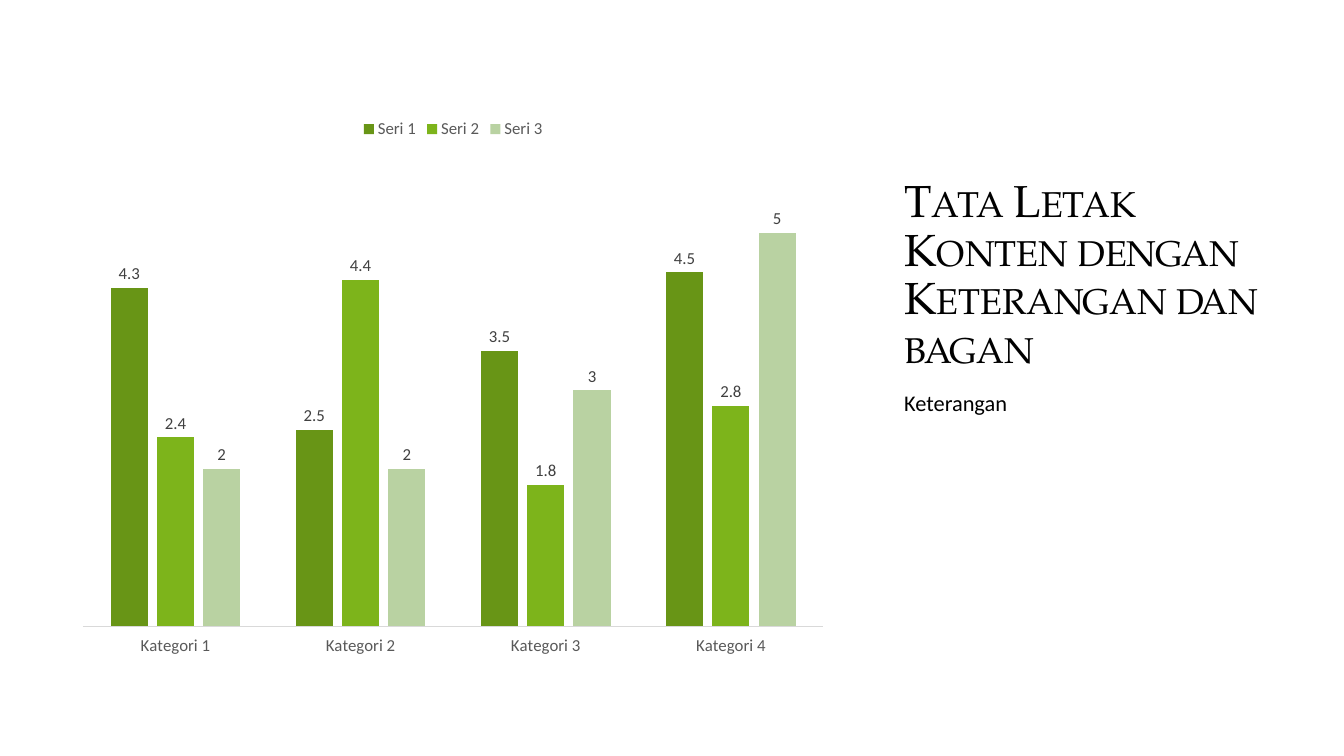
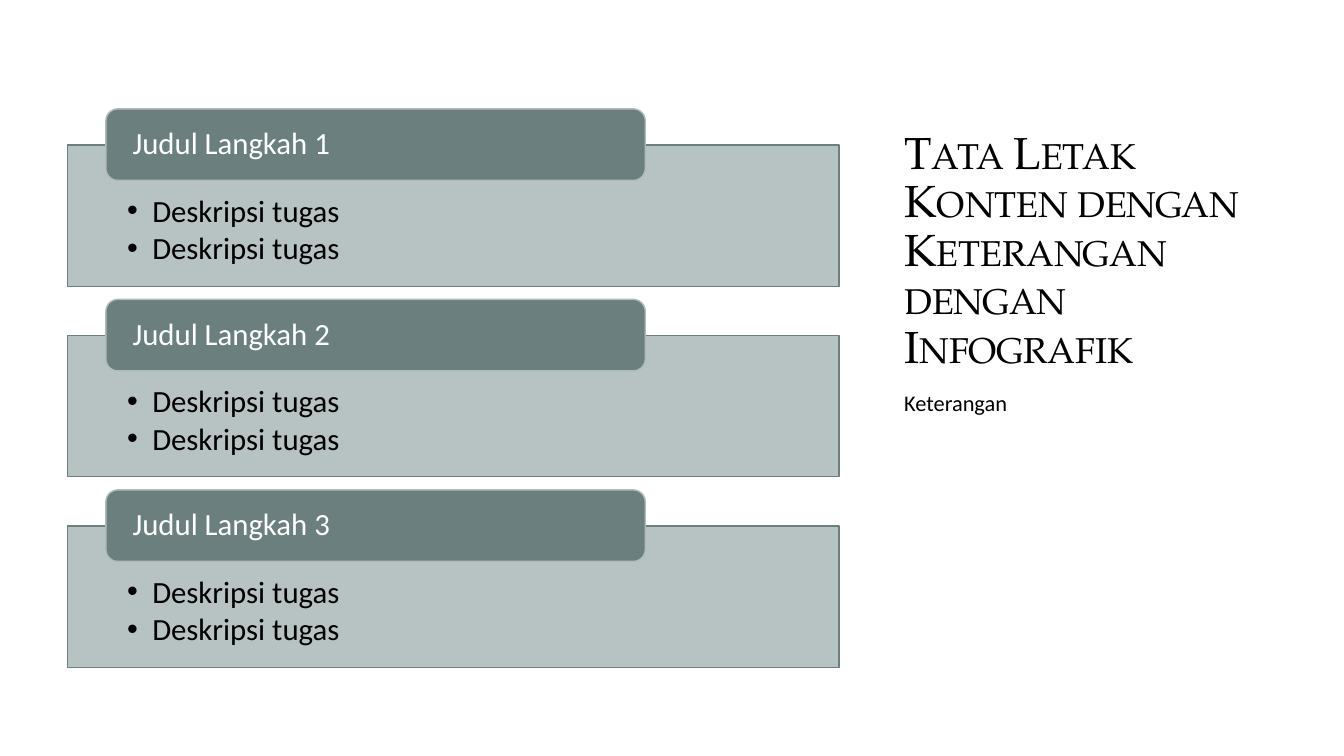
"""Build two caption slides: one with a column chart, one with a list of steps."""
from lxml.etree import SubElement
from pptx import Presentation
from pptx.chart.data import CategoryChartData
from pptx.dml.color import RGBColor
from pptx.enum.chart import XL_CHART_TYPE, XL_LABEL_POSITION, XL_LEGEND_POSITION, XL_TICK_LABEL_POSITION, XL_TICK_MARK
from pptx.enum.shapes import MSO_SHAPE
from pptx.enum.text import MSO_ANCHOR, MSO_AUTO_SIZE, PP_ALIGN
from pptx.oxml.ns import qn
from pptx.util import Inches, Pt

BLACK, WHITE = "000000", "FFFFFF"
AXIS_TEXT, LABEL_TEXT, AXIS_LINE = "595959", "404040", "D9D9D9"
SLATE, PALE_SLATE = "6B7F7F", "B0BCBC"
HEADING = {"name": "TeX Gyre Pagella", "size": Pt(32)}
CAPTION = {"name": "Calibri", "size": Pt(16)}
STEP = {"name": "Calibri", "size": Pt(22)}
CHART_TEXT = {"name": "Calibri", "size": Pt(12)}
LEFT, CONTENT_WIDTH = Inches(0.67), Inches(7.65)
SIDE_LEFT, SIDE_WIDTH = Inches(8.87), Inches(3.8)


def paint(fill, color):
    fill.solid()
    fill.fore_color.rgb = RGBColor.from_string(color)


def set_format(target, values, color=None):
    for attribute, value in values.items():
        setattr(target, attribute, value)
    if color:
        paint(target.fill, color)


deck = Presentation()
deck.slide_width, deck.slide_height = Inches(13.33), Inches(7.5)

slides = []
for heading in ("Tata Letak Konten dengan Keterangan dan bagan",
                "Tata Letak Konten dengan Keterangan dengan Infografik"):
    slide = deck.slides.add_slide(deck.slide_layouts[5])
    slides.append(slide)
    title = slide.shapes.title
    set_format(title, {"left": SIDE_LEFT, "top": Inches(1.25), "width": SIDE_WIDTH, "height": Inches(2.5)})
    caption = slide.shapes.add_textbox(SIDE_LEFT, Inches(3.84), SIDE_WIDTH, Inches(2.3))
    for part, text, look, anchor in ((title, heading, HEADING, MSO_ANCHOR.BOTTOM),
                                     (caption, "Keterangan", CAPTION, MSO_ANCHOR.TOP)):
        set_format(part.text_frame, {"text": text, "word_wrap": True, "auto_size": MSO_AUTO_SIZE.NONE,
                                     "vertical_anchor": anchor})
        paragraph = part.text_frame.paragraphs[0]
        set_format(paragraph, {"alignment": PP_ALIGN.LEFT, "line_spacing": 0.9})
        set_format(paragraph.runs[0].font, look, BLACK)
    for properties in title.element.iter(qn("a:rPr")):
        properties.set("cap", "small")

chart_slide, steps_slide = slides

figures = CategoryChartData()
figures.categories = [f"Kategori {number}" for number in range(1, 5)]
figures.add_series("Seri 1", (4.3, 2.5, 3.5, 4.5))
figures.add_series("Seri 2", (2.4, 4.4, 1.8, 2.8))
figures.add_series("Seri 3", (2, 2, 3, 5))
chart = chart_slide.shapes.add_chart(XL_CHART_TYPE.COLUMN_CLUSTERED, LEFT, Inches(1.07),
                                     CONTENT_WIDTH, Inches(5.55), figures).chart
set_format(chart, {"has_title": False, "has_legend": True})
set_format(chart.font, {"name": "Calibri", "size": Pt(10)}, BLACK)
set_format(chart.legend, {"position": XL_LEGEND_POSITION.TOP, "include_in_layout": False})
set_format(chart.legend.font, CHART_TEXT, AXIS_TEXT)
set_format(chart.value_axis, {"visible": False, "has_major_gridlines": False,
                              "minimum_scale": 0, "maximum_scale": 6})
categories = chart.category_axis
set_format(categories, {"major_tick_mark": XL_TICK_MARK.NONE, "minor_tick_mark": XL_TICK_MARK.NONE,
                        "tick_label_position": XL_TICK_LABEL_POSITION.LOW})
set_format(categories.tick_labels.font, CHART_TEXT, AXIS_TEXT)
set_format(categories.format.line, {"width": Pt(0.75)}, AXIS_LINE)
columns = chart.plots[0]
set_format(columns, {"gap_width": 150, "overlap": -25, "vary_by_categories": False})
for series, green in zip(columns.series, ("689516", "7DB41B", "B9D2A2")):
    paint(series.format.fill, green)
    set_format(series.data_labels, {"show_value": True, "position": XL_LABEL_POSITION.OUTSIDE_END})
    set_format(series.data_labels.font, CHART_TEXT, LABEL_TEXT)

for number in range(3):
    top = Inches(1.44) + number * Inches(1.89)
    tasks = steps_slide.shapes.add_shape(MSO_SHAPE.RECTANGLE, LEFT, top, CONTENT_WIDTH, Inches(1.4))
    heading = steps_slide.shapes.add_shape(MSO_SHAPE.ROUNDED_RECTANGLE, Inches(1.05), top - Inches(0.36),
                                           Inches(5.35), Inches(0.71))
    for part, text, fill, outline, ink, gap, frame in (
            (tasks, "Deskripsi tugas\nDeskripsi tugas", PALE_SLATE, SLATE, BLACK, 3,
             {"vertical_anchor": MSO_ANCHOR.TOP, "margin_left": Inches(0.59), "margin_right": Inches(0.59),
              "margin_top": Inches(0.5), "margin_bottom": Inches(0.17)}),
            (heading, f"Judul Langkah {number + 1}", SLATE, PALE_SLATE, WHITE, 0,
             {"vertical_anchor": MSO_ANCHOR.MIDDLE, "margin_left": Inches(0.23), "margin_right": Inches(0.23),
              "margin_top": 0, "margin_bottom": 0})):
        part.shadow.inherit = False
        paint(part.fill, fill)
        set_format(part.line, {"width": Pt(1)}, outline)
        set_format(part.text_frame, {"text": text, "word_wrap": True, **frame})
        for paragraph in part.text_frame.paragraphs:
            set_format(paragraph, {"alignment": PP_ALIGN.LEFT, "line_spacing": 0.9, "space_after": Pt(gap)})
            set_format(paragraph.runs[0].font, STEP, ink)
    fill_color = tasks.element.spPr.find(qn("a:solidFill"))[0]
    SubElement(fill_color, qn("a:alpha"), val="90000")
    for properties in tasks.element.iter(qn("a:pPr")):
        properties.set("marL", str(Inches(0.25)))
        properties.set("indent", str(Inches(-0.25)))
        SubElement(properties, qn("a:buFont"), typeface="Arial")
        SubElement(properties, qn("a:buChar"), char="•")

deck.save("out.pptx")
